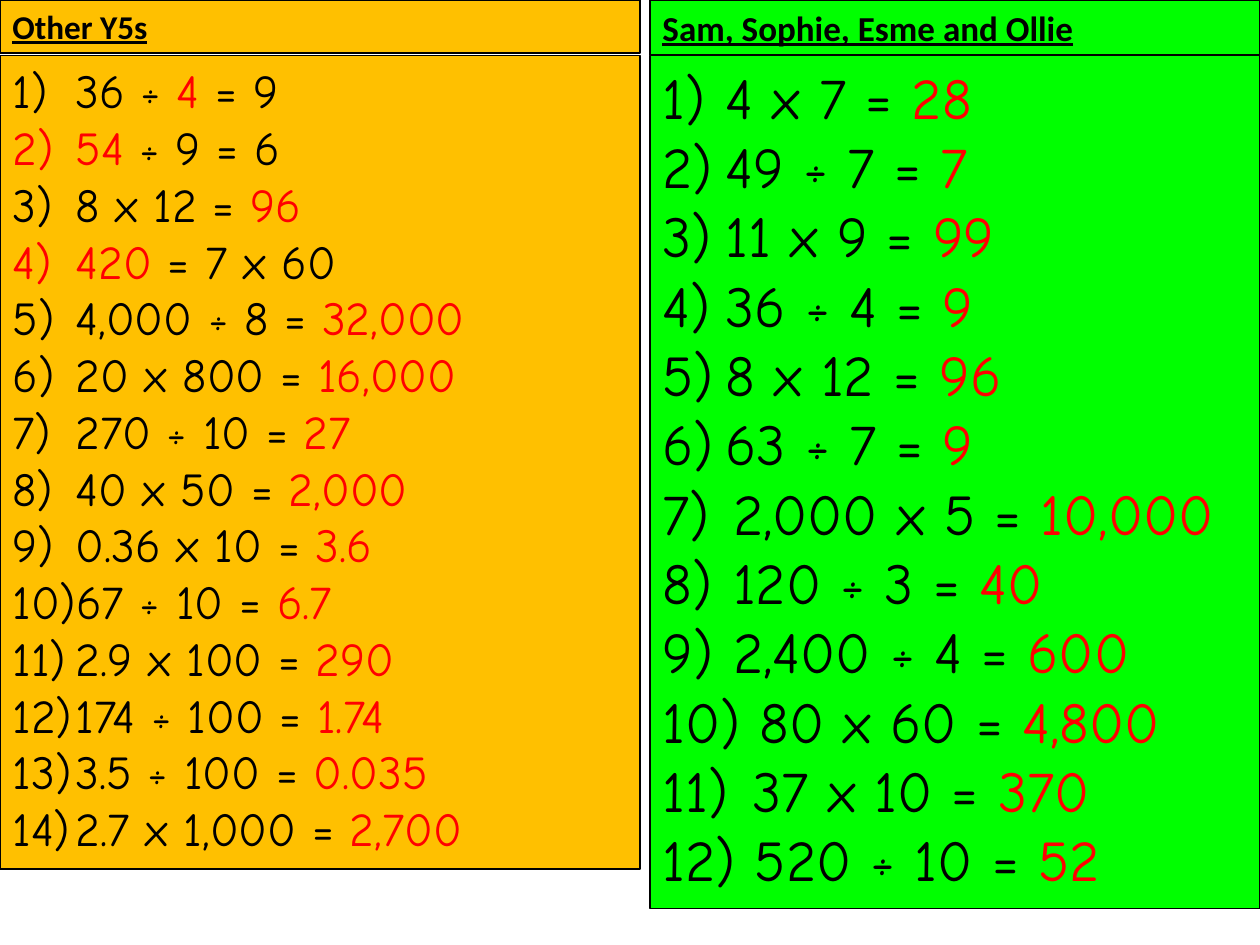
from lxml.etree import SubElement
from pptx import Presentation
from pptx.dml.color import RGBColor
from pptx.enum.shapes import MSO_SHAPE
from pptx.enum.text import MSO_ANCHOR, MSO_AUTO_SIZE, PP_ALIGN
from pptx.oxml.ns import qn
from pptx.util import Inches, Pt

AMBER = RGBColor(0xFF, 0xC0, 0x00)
GREEN = RGBColor(0x00, 0xFF, 0x00)
BLACK = RGBColor(0x00, 0x00, 0x00)
RED = RGBColor(0xFF, 0x00, 0x00)

WIDTH, HEIGHT = 10, 7.5
HEADER_SHARE = 0.44 / HEIGHT

OTHER_QUESTIONS = [
    "36 ÷ *4 *= 9", "*54* ÷ 9 = 6", "8 x 12 = *96*", "*420* = 7 x 60",
    "4,000 ÷ 8 = *32,000*", "20 x 800 = *16,000*", "270 ÷ 10 = *27*",
    "40 x 50 = *2,000*", "0.36 x 10 = *3.6*", "67 ÷ 10 =* 6.7*",
    "2.9 x 100 = *290*", "174 ÷ 100 = *1.74*", "3.5 ÷ 100 = *0.035*",
    "2.7 x 1,000 = *2,700*",
]
NAMED_QUESTIONS = [
    "4 x 7 = *28*", "49 ÷ 7 = *7*", "11 x 9 = *99*", "36 ÷ 4 = *9*",
    "8 x 12 = *96*", "63 ÷ 7 = *9*",
]
NAMED_EXTENSION = [
    "2,000 x 5 = *10,000*", "120 ÷ 3 = *40*", "2,400 ÷ 4 = *600*",
    " 80 x 60 = *4,800*", " 37 x 10 = *370*", " 520 ÷ 10 = *52*",
]


class AnswerSheet:
    """Draws headed panels of numbered questions with highlighted answers."""

    heading_font = "Calibri"
    question_font = "Comic Neue"

    def __init__(self, deck):
        self.deck = deck
        self.page = deck.slides.add_slide(deck.slide_layouts[6])

    def panel(self, left, top, width, height, fill):
        box = self.page.shapes.add_shape(
            MSO_SHAPE.RECTANGLE,
            int(left * self.deck.slide_width), int(top * self.deck.slide_height),
            int(width * self.deck.slide_width), int(height * self.deck.slide_height))
        box.shadow.inherit = False
        box.fill.solid()
        box.fill.fore_color.rgb = fill
        box.line.color.rgb = BLACK
        box.line.width = Pt(1)
        frame = box.text_frame
        frame.word_wrap = True
        frame.auto_size = MSO_AUTO_SIZE.SHAPE_TO_FIT_TEXT
        frame.vertical_anchor = MSO_ANCHOR.TOP
        return frame

    def style(self, span, font, size, color):
        span.font.name = font
        span.font.size = Pt(size)
        span.font.color.rgb = color

    def heading(self, left, width, height, fill, text, size):
        frame = self.panel(left, 0, width, height, fill)
        frame.text = text
        para = frame.paragraphs[0]
        para.alignment = PP_ALIGN.LEFT
        span = para.runs[0]
        self.style(span, self.heading_font, size, BLACK)
        span.font.bold = span.font.underline = True

    def questions(self, left, width, height, fill, size, groups):
        frame = self.panel(left, HEADER_SHARE, width, height, fill)
        start = 1
        for indent, lines in groups:
            for line in lines:
                first = line is groups[0][1][0]
                para = frame.paragraphs[0] if first else frame.add_paragraph()
                self.number(para, indent, start)
                self.equation(para, line, size)
            start += len(lines)

    def number(self, para, indent, start):
        para.alignment = PP_ALIGN.LEFT
        properties = para._p.get_or_add_pPr()
        properties.set("marL", str(Inches(indent)))
        properties.set("indent", str(-Inches(indent)))
        SubElement(properties, qn("a:buFont"), typeface="+mj-lt")
        numbering = SubElement(properties, qn("a:buAutoNum"), type="arabicParenR")
        if start > 1:
            numbering.set("startAt", str(start))

    def equation(self, para, line, size):
        for index, piece in enumerate(line.split("*")):
            if piece:
                span = para.add_run()
                span.text = piece
                self.style(span, self.question_font, size, RED if index % 2 else BLACK)


def main():
    deck = Presentation()
    deck.slide_width, deck.slide_height = Inches(WIDTH), Inches(HEIGHT)
    sheet = AnswerSheet(deck)
    left_width, right_start = 0.508, 0.516
    right_width = 1 - right_start
    sheet.heading(0, left_width, 0.42 / HEIGHT, AMBER, "Other Y5s", 19)
    sheet.heading(right_start, right_width, HEADER_SHARE, GREEN,
                  "Sam, Sophie, Esme and Ollie", 20)
    sheet.questions(0, left_width, 6.46 / HEIGHT, AMBER, 27,
                    [(0.5, OTHER_QUESTIONS)])
    sheet.questions(right_start, right_width, 6.77 / HEIGHT, GREEN, 33,
                    [(0.5, NAMED_QUESTIONS), (0.56, NAMED_EXTENSION)])
    deck.save("out.pptx")


if __name__ == "__main__":
    main()
